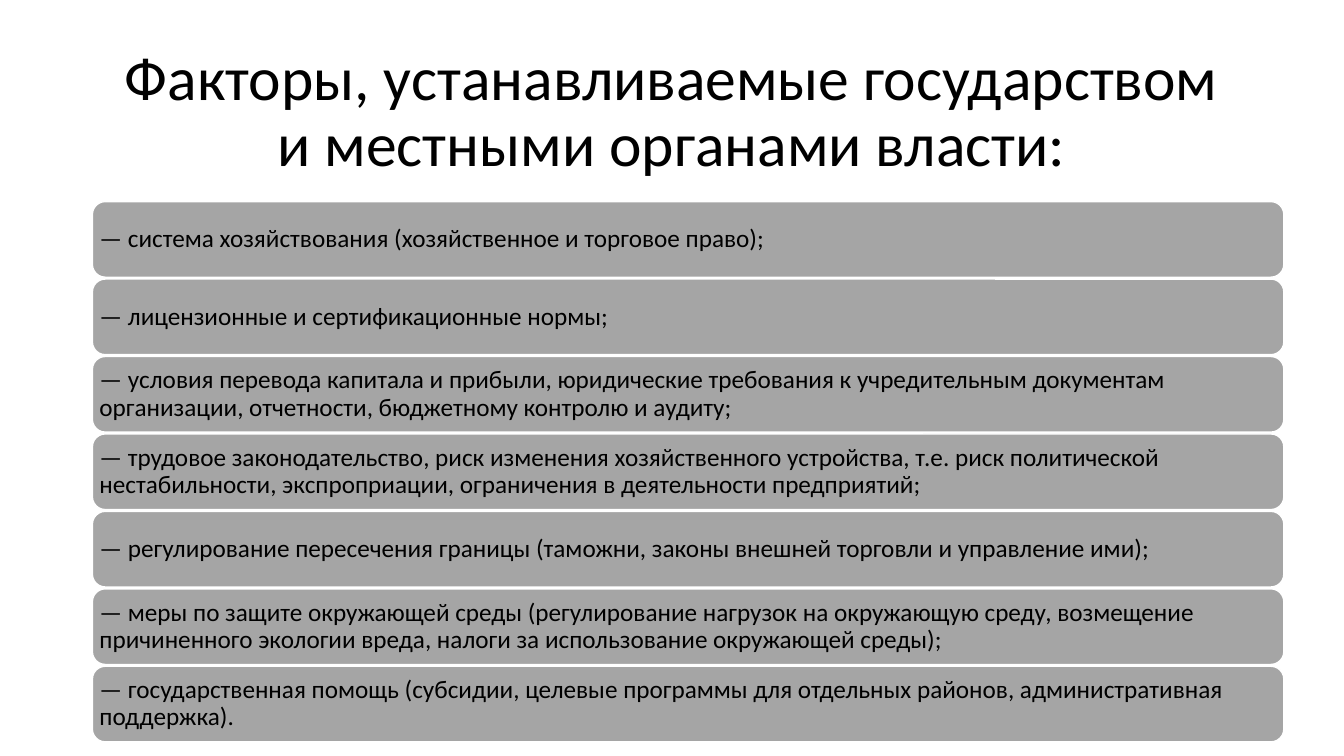
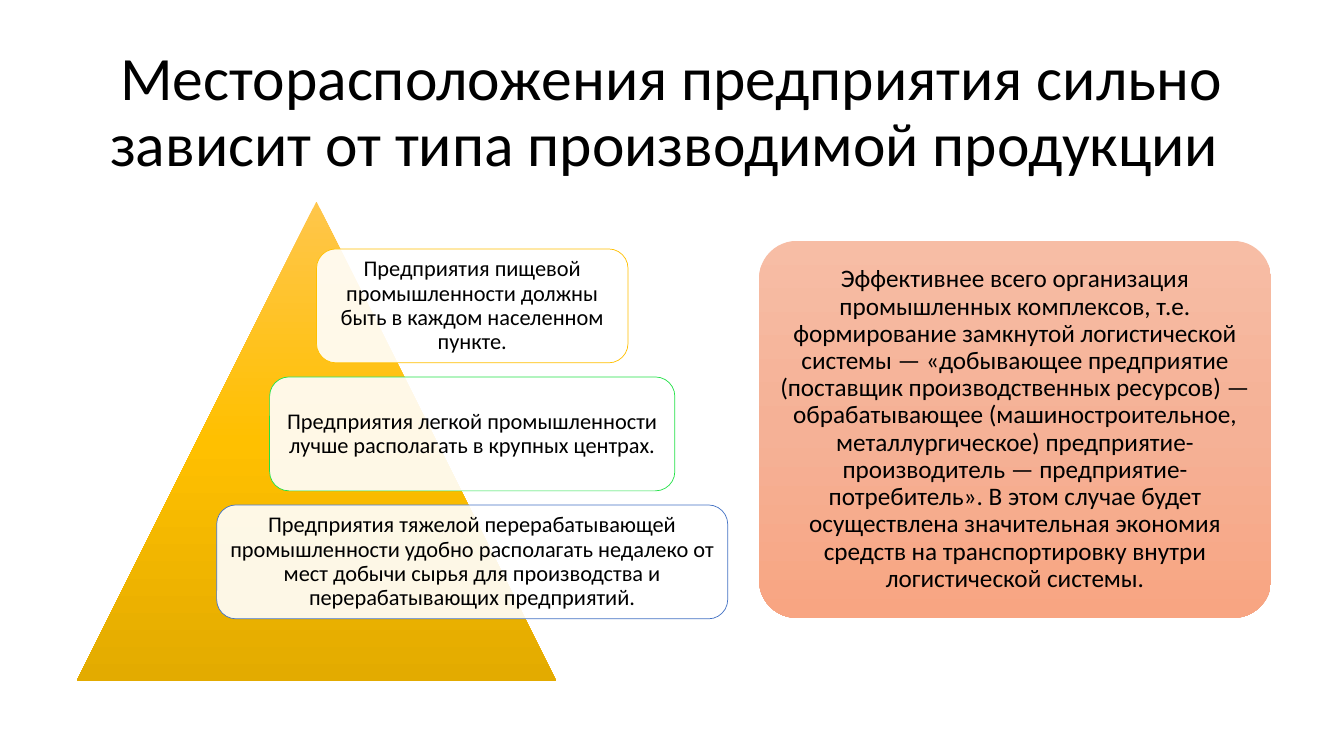
from dataclasses import dataclass
from typing import Optional

from lxml import etree
from pptx import Presentation
from pptx.dml.color import RGBColor
from pptx.enum.shapes import MSO_SHAPE
from pptx.enum.text import MSO_ANCHOR, MSO_AUTO_SIZE, PP_ALIGN
from pptx.oxml.ns import qn
from pptx.util import Inches, Length, Pt

ROUNDED = MSO_SHAPE.ROUNDED_RECTANGLE
TRIANGLE = MSO_SHAPE.ISOSCELES_TRIANGLE
MIDDLE = MSO_ANCHOR.MIDDLE
FIXED = MSO_AUTO_SIZE.NONE
LEFT = PP_ALIGN.LEFT
CENTER = PP_ALIGN.CENTER

COLUMNS, ROWS = 160, 90
CELLS_PER_INCH = 12
TITLE_ONLY = 5
CORNER_INSET = 0.29


@dataclass(frozen=True)
class Theme:
    """Fonts, sizes, colours and spacing shared by the deck."""

    font: str = "Calibri"
    title_size: int = 44
    text_size: int = 18
    card_size: int = 16
    line_spacing: float = 0.9
    padding: float = 0.84
    corner: float = 0.17
    panel_corner: float = 0.1
    ink: str = "000000"
    paper: str = "FFFFFF"
    bar: str = "A5A5A5"
    gold: str = "FFC000"
    green: str = "23E148"
    blue: str = "4472C4"
    pyramid: tuple[str, ...] = ("FFC64B", "FFC000", "E3AB00")
    panel: tuple[str, ...] = ("F7BDA5", "F5B196", "F8A582")


THEME = Theme()


@dataclass(frozen=True)
class Area:
    """A rectangle measured in grid columns and rows."""

    column: float
    row: float
    width: float
    height: float

    def lengths(self) -> tuple[Length, Length, Length, Length]:
        """Return left, top, width and height as slide lengths."""
        return (cells(self.column), cells(self.row),
                cells(self.width), cells(self.height))


@dataclass(frozen=True)
class Style:
    """The look of a shape and of the text inside it."""

    colors: tuple[str, ...]
    outline: Optional[str] = None
    outline_width: float = 0.5
    opacity: int = 100
    corner: float = THEME.corner
    size: int = THEME.text_size
    alignment: PP_ALIGN = CENTER


@dataclass(frozen=True)
class Card:
    """A centred text card lying over the pyramid."""

    text: str
    width: float
    outline: str


TITLE_AREA = Area(11, 4.8, 138, 17.4)
FIRST_BAR = Area(11, 24, 141.84, 9)
BAR_PITCH = 9.22
PYRAMID_AREA = Area(9.12, 24, 57.12, 57.12)
PANEL_AREA = Area(90.36, 28.68, 60.96, 44.88)
CARD_CENTER, CARD_TOP = 56.22, 29.64
CARD_HEIGHT, CARD_PITCH = 13.56, 15.24

FACTORS_TITLE = "Факторы, устанавливаемые государством и местными органами власти:"
FACTORS = (
    "— система хозяйствования (хозяйственное и торговое право);",
    "— лицензионные и сертификационные нормы;",
    "— условия перевода капитала и прибыли, юридические требования к "
    "учредительным документам организации, отчетности, бюджетному контролю и аудиту;",
    "— трудовое законодательство, риск изменения хозяйственного устройства, "
    "т.е. риск политической нестабильности, экспроприации, ограничения в "
    "деятельности предприятий;",
    "— регулирование пересечения границы (таможни, законы внешней торговли и "
    "управление ими);",
    "— меры по защите окружающей среды (регулирование нагрузок на окружающую "
    "среду, возмещение причиненного экологии вреда, налоги за использование "
    "окружающей среды);",
    "— государственная помощь (субсидии, целевые программы для отдельных "
    "районов, административная поддержка).",
)

LOCATION_TITLE = "Месторасположения предприятия сильно зависит от типа производимой продукции "
CARDS = (
    Card("Предприятия пищевой промышленности должны быть в каждом населенном "
         "пункте.", 37.08, THEME.gold),
    Card("Предприятия легкой промышленности лучше располагать в крупных "
         "центрах.", 48.24, THEME.green),
    Card("Предприятия тяжелой перерабатывающей промышленности удобно располагать "
         "недалеко от мест добычи сырья для производства и перерабатывающих "
         "предприятий.", 60.84, THEME.blue),
)
COMPLEXES = (
    "Эффективнее всего организация промышленных комплексов, т.е. формирование "
    "замкнутой логистической системы — «добывающее предприятие (поставщик "
    "производственных ресурсов) — обрабатывающее (машиностроительное, "
    "металлургическое) предприятие-производитель — предприятие-потребитель». "
    "В этом случае будет осуществлена значительная экономия средств на "
    "транспортировку внутри логистической системы."
)


def cells(count: float) -> Length:
    """Convert a number of grid cells to a slide length."""
    return Inches(count / CELLS_PER_INCH)


def write_text(frame, text: str, size: int, alignment: PP_ALIGN) -> None:
    """Put one formatted paragraph into a text frame."""
    frame.text = text
    frame.word_wrap = True
    frame.auto_size = FIXED
    frame.vertical_anchor = MIDDLE
    para = frame.paragraphs[0]
    para.alignment = alignment
    para.line_spacing = THEME.line_spacing
    para.font.name = THEME.font
    para.font.size = Pt(size)
    para.font.color.rgb = RGBColor.from_string(THEME.ink)


def paint(shape, style: Style) -> None:
    """Apply the fill and the outline of a style."""
    shape.shadow.inherit = False
    if len(style.colors) > 1:
        shape.fill.gradient()
        shape.fill.gradient_angle = 270
        stops = shape.element.spPr.find(".//" + qn("a:gsLst"))
        for stop in list(stops):
            stops.remove(stop)
        step = 100000 // (len(style.colors) - 1)
        for index, color in enumerate(style.colors):
            stop = etree.SubElement(stops, qn("a:gs"), pos=str(index * step))
            etree.SubElement(stop, qn("a:srgbClr"), val=color)
    else:
        shape.fill.solid()
        shape.fill.fore_color.rgb = RGBColor.from_string(style.colors[0])
        if style.opacity < 100:
            color = shape.element.spPr.find(".//" + qn("a:srgbClr"))
            etree.SubElement(color, qn("a:alpha"), val=str(style.opacity * 1000))
    if style.outline:
        shape.line.color.rgb = RGBColor.from_string(style.outline)
        shape.line.width = Pt(style.outline_width)
    else:
        shape.line.fill.background()


def add_box(page, area: Area, text: str, style: Style) -> None:
    """Draw a rounded box whose padding allows for its corners."""
    box = page.shapes.add_shape(ROUNDED, *area.lengths())
    box.adjustments[0] = style.corner
    paint(box, style)
    frame = box.text_frame
    corner_inset = min(area.width, area.height) * style.corner * CORNER_INSET
    inset = cells(max(0, THEME.padding - corner_inset))
    frame.margin_left = frame.margin_right = inset
    frame.margin_top = frame.margin_bottom = inset
    write_text(frame, text, style.size, style.alignment)


def add_page(deck, title: str):
    """Add a slide with the shared title style."""
    page = deck.slides.add_slide(deck.slide_layouts[TITLE_ONLY])
    heading = page.shapes.title
    heading.left, heading.top, heading.width, heading.height = TITLE_AREA.lengths()
    write_text(heading.text_frame, title, THEME.title_size, CENTER)
    return page


def add_factors_page(deck) -> None:
    """Build the slide with the list of state factors."""
    page = add_page(deck, FACTORS_TITLE)
    style = Style((THEME.bar,), THEME.paper, 1, alignment=LEFT)
    for index, factor in enumerate(FACTORS):
        area = Area(FIRST_BAR.column, FIRST_BAR.row + index * BAR_PITCH,
                    FIRST_BAR.width, FIRST_BAR.height)
        add_box(page, area, factor, style)


def add_location_page(deck) -> None:
    """Build the slide with the pyramid, its cards and the side panel."""
    page = add_page(deck, LOCATION_TITLE)
    pyramid = page.shapes.add_shape(TRIANGLE, *PYRAMID_AREA.lengths())
    paint(pyramid, Style(THEME.pyramid))
    for index, card in enumerate(CARDS):
        area = Area(CARD_CENTER - card.width / 2, CARD_TOP + index * CARD_PITCH,
                    card.width, CARD_HEIGHT)
        style = Style((THEME.paper,), card.outline, opacity=90, size=THEME.card_size)
        add_box(page, area, card.text, style)
    add_box(page, PANEL_AREA, COMPLEXES, Style(THEME.panel, corner=THEME.panel_corner))


def main() -> None:
    """Build and save the deck."""
    deck = Presentation()
    deck.slide_width, deck.slide_height = cells(COLUMNS), cells(ROWS)
    add_factors_page(deck)
    add_location_page(deck)
    deck.save("out.pptx")


if __name__ == "__main__":
    main()
